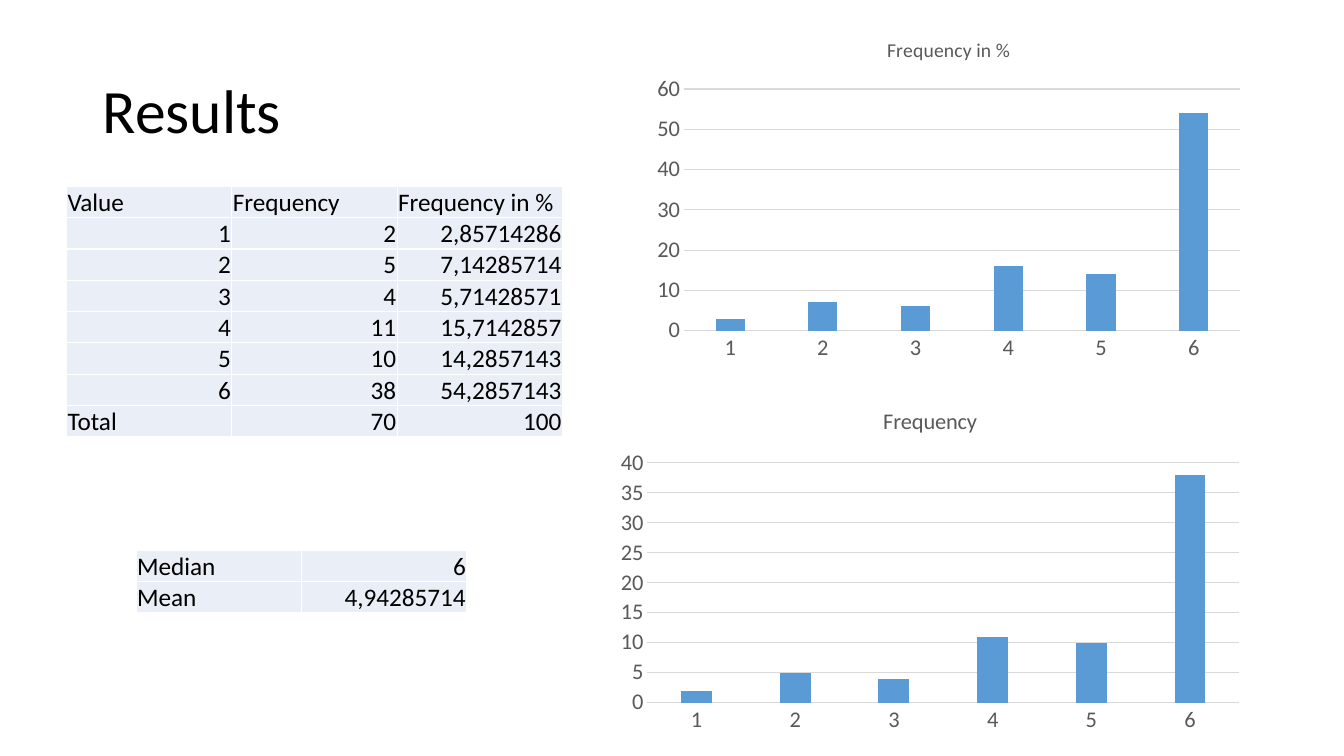
from lxml.etree import SubElement
from pptx import Presentation
from pptx.chart.data import CategoryChartData
from pptx.dml.color import RGBColor
from pptx.enum.chart import XL_CHART_TYPE, XL_TICK_MARK
from pptx.enum.text import MSO_ANCHOR, PP_ALIGN
from pptx.oxml.ns import qn
from pptx.util import Inches, Pt

TITLE = "Results"
FREQUENCY_ROWS = [
    ("Value", "Frequency", "Frequency in %"),
    ("1", "2", "2,85714286"),
    ("2", "5", "7,14285714"),
    ("3", "4", "5,71428571"),
    ("4", "11", "15,7142857"),
    ("5", "10", "14,2857143"),
    ("6", "38", "54,2857143"),
    ("Total", "70", "100"),
]
AVERAGE_ROWS = [("Median", "6"), ("Mean", "4,94285714")]
TABLES = [(0.66, 1.85, FREQUENCY_ROWS), (1.35, 5.46, AVERAGE_ROWS)]
CATEGORIES = ["1", "2", "3", "4", "5", "6"]
CHARTS = [
    ("Frequency in %", 14, (6.4, 0.2, 6.02, 3.46), (3, 7, 6, 16, 14, 54), 60, 10),
    ("Frequency", 16, (6.03, 3.86, 6.39, 3.49), (2, 5, 4, 11, 10, 38), 40, 5),
]

FONT = "Calibri"
COLUMN_WIDTH, ROW_HEIGHT = 1.64, 0.31
BLACK = RGBColor(0x00, 0x00, 0x00)
WHITE = RGBColor(0xFF, 0xFF, 0xFF)
PALE_BLUE = RGBColor(0xEA, 0xEF, 0xF7)
BLUE = RGBColor(0x5B, 0x9B, 0xD5)
GREY = RGBColor(0x59, 0x59, 0x59)
LIGHT_GREY = RGBColor(0xD9, 0xD9, 0xD9)


def style_font(font, size, color):
    font.name = FONT
    font.size = Pt(size)
    font.bold = False
    font.color.rgb = color


def add_title(page):
    box = page.shapes.add_textbox(Inches(0.92), Inches(0.4), Inches(11.5), Inches(1.45))
    frame = box.text_frame
    frame.word_wrap = True
    frame.vertical_anchor = MSO_ANCHOR.MIDDLE
    frame.text = TITLE
    para = frame.paragraphs[0]
    para.line_spacing = 0.9
    style_font(para.runs[0].font, 44, BLACK)


def add_borders(cell):
    properties = cell._tc.get_or_add_tcPr()
    for side in ("a:lnL", "a:lnR", "a:lnT", "a:lnB"):
        line = SubElement(properties, qn(side), w=str(Pt(1)))
        fill = SubElement(line, qn("a:solidFill"))
        SubElement(fill, qn("a:srgbClr"), val=str(WHITE))


def fill_cell(cell, text):
    add_borders(cell)
    cell.fill.solid()
    cell.fill.fore_color.rgb = PALE_BLUE
    cell.vertical_anchor = MSO_ANCHOR.BOTTOM
    cell.margin_left = cell.margin_right = cell.margin_top = Inches(0.01)
    cell.margin_bottom = 0
    cell.text = text
    para = cell.text_frame.paragraphs[0]
    para.alignment = PP_ALIGN.RIGHT if text[0].isdigit() else PP_ALIGN.LEFT
    style_font(para.runs[0].font, 18, BLACK)


def add_table(page, left, top, rows):
    columns = len(rows[0])
    table = page.shapes.add_table(
        len(rows), columns, Inches(left), Inches(top),
        Inches(COLUMN_WIDTH * columns), Inches(ROW_HEIGHT * len(rows)),
    ).table
    table.first_row = table.horz_banding = False
    for row_index, row in enumerate(rows):
        for column_index, text in enumerate(row):
            fill_cell(table.cell(row_index, column_index), text)


def add_chart(page, title, title_size, bounds, values, maximum, step):
    data = CategoryChartData()
    data.categories = CATEGORIES
    data.add_series(title, values)
    chart = page.shapes.add_chart(
        XL_CHART_TYPE.COLUMN_CLUSTERED, *map(Inches, bounds), data
    ).chart
    style_font(chart.font, 10, BLACK)
    chart.has_legend = False
    chart.has_title = True
    chart.chart_title.include_in_layout = False
    chart.chart_title.text_frame.text = title
    style_font(chart.chart_title.text_frame.paragraphs[0].runs[0].font, title_size, GREY)

    plot = chart.plots[0]
    plot.vary_by_categories = False
    plot.gap_width = 219
    plot.overlap = -27
    bars = plot.series[0].format.fill
    bars.solid()
    bars.fore_color.rgb = BLUE

    for axis in (chart.category_axis, chart.value_axis):
        axis.major_tick_mark = axis.minor_tick_mark = XL_TICK_MARK.NONE
        style_font(axis.tick_labels.font, 16, GREY)
    value_axis = chart.value_axis
    value_axis.minimum_scale = 0
    value_axis.maximum_scale = maximum
    value_axis.major_unit = step
    value_axis.format.line.fill.background()
    for line in (chart.category_axis.format.line, value_axis.major_gridlines.format.line):
        line.color.rgb = LIGHT_GREY
        line.width = Pt(0.75)


def main():
    deck = Presentation()
    deck.slide_width, deck.slide_height = Inches(13.33), Inches(7.5)
    page = deck.slides.add_slide(deck.slide_layouts[6])
    add_title(page)
    for table in TABLES:
        add_table(page, *table)
    for chart in CHARTS:
        add_chart(page, *chart)
    deck.save("out.pptx")


if __name__ == "__main__":
    main()
